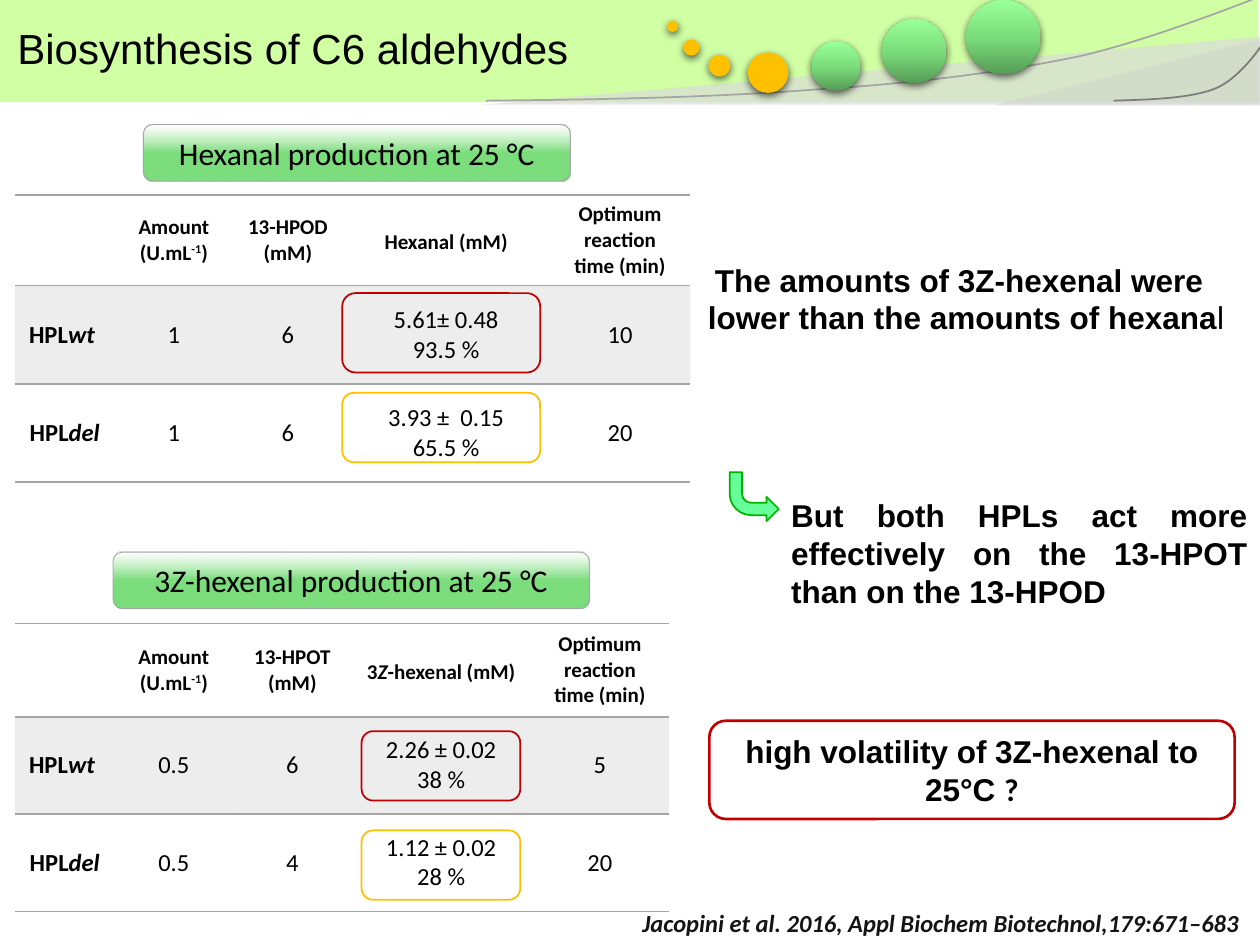
import collections

import lxml.etree
import pptx
import pptx.dml.color
import pptx.enum.shapes
import pptx.enum.text
import pptx.oxml.ns
import pptx.util

Box = collections.namedtuple("Box", "left top width height")
SHAPE = pptx.enum.shapes.MSO_SHAPE
ALIGN = pptx.enum.text.PP_ALIGN
MIDDLE = pptx.enum.text.MSO_ANCHOR.MIDDLE
TOP = pptx.enum.text.MSO_ANCHOR.TOP
GREY, RED, AMBER = "A5A5A5", "C00000", "FFC000"
SPHERE = [(0, "569C56", 100), (50, "7BDD7B", 100), (100, "99FF99", 100)]
GLOSS = [(50, "7BDD7B", 100), (98, "FFFFFF", 73), (100, "99FF99", 100)]
NO_STYLE = "{2D5ABB26-0587-4C30-8999-92F81FD0307C}"


def rgb(code):
    """Turn a hex string into a colour."""
    return pptx.dml.color.RGBColor.from_string(code)


def node(parent, tag, **attributes):
    """Append a DrawingML element to its parent."""
    values = {key: str(value) for key, value in attributes.items()}
    return lxml.etree.SubElement(parent, pptx.oxml.ns.qn(tag), values)


def emu(box):
    """Convert a box in centimetres to lengths."""
    return [pptx.util.Cm(length) for length in box]


def within(box, left, top, width, height):
    """Place a box relative to the corner of another."""
    return Box(box.left + left, box.top + top, width, height)


def color_node(parent, code, alpha=100):
    """Append a colour with its opacity in percent."""
    color = node(parent, "a:srgbClr", val=code)
    if alpha < 100:
        node(color, "a:alpha", val=alpha * 1000)


def paint(fill, code, alpha=100):
    """Fill with a solid colour of the given opacity."""
    fill.solid()
    fill.fore_color.rgb = rgb(code)
    if alpha < 100:
        solid = fill._xPr.find(pptx.oxml.ns.qn("a:solidFill"))
        node(solid[0], "a:alpha", val=alpha * 1000)


def paint_gradient(shape, stops):
    """Fill a shape with a gradient that runs upwards."""
    paint(shape.fill, stops[0][1])
    properties = shape._element.spPr
    gradient = node(properties, "a:gradFill", rotWithShape=1)
    listing = node(gradient, "a:gsLst")
    for position, code, alpha in stops:
        color_node(node(listing, "a:gs", pos=position * 1000), code, alpha)
    node(gradient, "a:lin", ang=16200000, scaled=0)
    properties.replace(properties.find(pptx.oxml.ns.qn("a:solidFill")), gradient)


def outline(shape, code=None, weight=1):
    """Draw the line of a shape, or remove it."""
    if code:
        shape.line.color.rgb = rgb(code)
        shape.line.width = pptx.util.Pt(weight)
    else:
        shape.line.fill.background()


def draw(slide, kind, box, fill=None, alpha=100, line=None, weight=1, flip=None):
    """Add a preset shape without shadow."""
    shape = slide.shapes.add_shape(kind, *emu(box))
    shape.shadow.inherit = False
    if isinstance(fill, list):
        paint_gradient(shape, fill)
    elif fill:
        paint(shape.fill, fill, alpha)
    else:
        shape.fill.background()
    outline(shape, line, weight)
    if flip:
        shape._element.spPr.xfrm.set(flip, "1")
    return shape


def write(frame, paragraphs, size=18, font="Arial", color="000000", bold=False,
          italic=False, align=ALIGN.CENTER, anchor=MIDDLE, spacing=None):
    """Write paragraphs of runs, each a string or a pair of string and changes."""
    frame.word_wrap = True
    frame.vertical_anchor = anchor
    for index, runs in enumerate(paragraphs):
        paragraph = frame.add_paragraph() if index else frame.paragraphs[0]
        paragraph.alignment = align
        paragraph.line_spacing = spacing
        for piece in [runs] if isinstance(runs, str) else runs:
            text, changes = (piece, {}) if isinstance(piece, str) else piece
            run = paragraph.add_run()
            run.text = text
            run.font.size = pptx.util.Pt(size)
            run.font.name = changes.get("font", font)
            run.font.bold = changes.get("bold", bold)
            run.font.italic = changes.get("italic", italic)
            run.font.color.rgb = rgb(color)
            if "baseline" in changes:
                run._r.get_or_add_rPr().set("baseline", str(changes["baseline"]))


def write_box(slide, box, paragraphs, **style):
    """Add a text box anchored at its top."""
    write(slide.shapes.add_textbox(*emu(box)).text_frame, paragraphs, anchor=TOP, **style)


def swoosh(slide, box, points, color):
    """Draw a smooth line through chained cubic curves."""
    traced = []
    for first in range(0, len(points) - 1, 3):
        controls = points[first:first + 4]
        for step in range(1, 17):
            t = step / 16
            weights = ((1 - t) ** 3, 3 * t * (1 - t) ** 2, 3 * t * t * (1 - t), t ** 3)
            traced.append([sum(w * p[axis] for w, p in zip(weights, controls)) for axis in (0, 1)])
    start, *rest = [(pptx.util.Cm(box.left + x), pptx.util.Cm(box.top + y))
                    for x, y in [points[0]] + traced]
    builder = slide.shapes.build_freeform(*start)
    builder.add_line_segments(rest, close=False)
    curve = builder.convert_to_shape()
    curve.shadow.inherit = False
    curve.fill.background()
    outline(curve, color)


def ball(slide, box, fill, line=None):
    """Draw a circle with a soft shadow below."""
    circle = draw(slide, SHAPE.OVAL, box, fill, line=line, weight=0.75)
    effects = circle._element.spPr.find(pptx.oxml.ns.qn("a:effectLst"))
    shadow = node(effects, "a:outerShdw", blurRad=57150, dist=19050, dir=5400000,
                  algn="ctr", rotWithShape=0)
    color_node(shadow, "000000", 63)


def banner(slide, box, heading):
    """Draw the header band with its title and chain of balls."""
    draw(slide, SHAPE.RECTANGLE, box, "CCFF99", 89)
    draw(slide, SHAPE.RIGHT_TRIANGLE, within(box, 9.73, 0.74, 15.67, 1.37), "DBDBDB", 68, flip="flipH")
    draw(slide, SHAPE.RIGHT_TRIANGLE, within(box, 20.02, 0.76, 5.51, 1.37), "C9C9C9", 33, flip="flipH")
    swoosh(slide, box, [(9.8, 2.03), (12.17, 2.01), (14.53, 1.96), (16.51, 1.8), (18.49, 1.68),
                        (20.24, 1.45), (21.74, 1.14), (23.22, 0.81), (25.48, -0.1), (25.48, -0.1)], GREY)
    swoosh(slide, box, [(22.45, 2.03), (23.22, 2.01), (23.98, 1.98), (24.46, 1.8),
                        (24.97, 1.63), (25.45, 0.89), (25.45, 0.89)], "7C7C7C")
    for left, top, size in [(19.48, 0, 1.5), (16.36, 0.84, 0.99), (17.78, 0.38, 1.3)]:
        ball(slide, within(box, left, top, size, size), SPHERE)
    for left, top, size in [(15.09, 1.07, 0.79), (14.3, 1.12, 0.41), (13.79, 0.81, 0.3), (13.46, 0.43, 0.2)]:
        ball(slide, within(box, left, top, size, size), AMBER, AMBER)
    title = slide.shapes.title
    title.left, title.top, title.width, title.height = emu(within(box, -0.89, 0.33, 13.59, 1.27))
    write(title.text_frame, [heading], size=24)
    slide.shapes._spTree.append(title._element)


def rule(cell, *sides):
    """Draw grey borders on the named sides of a cell."""
    properties = cell._tc.get_or_add_tcPr()
    for index, side in enumerate(sides):
        border = node(properties, "a:" + side, w=12700)
        color_node(node(border, "a:solidFill"), GREY)
        properties.insert(index, border)


def production(slide, box, heading, pill, columns, heights, headers, rows, marks):
    """Draw one heading, its table and the frames round the yields."""
    pill_left, pill_width = pill
    label = draw(slide, SHAPE.FLOWCHART_ALTERNATE_PROCESS,
                 within(box, pill_left, 0, pill_width, 1.14), GLOSS, line=GREY, weight=0.5)
    write(label.text_frame, [heading], font="Calibri")
    table_height = sum(heights)
    table = slide.shapes.add_table(3, 5, *emu(within(
        box, 0, box.height - table_height, box.width, table_height))).table
    table._tbl.tblPr.find(pptx.oxml.ns.qn("a:tableStyleId")).text = NO_STYLE
    table.first_row = table.horz_banding = False
    for column, width in zip(table.columns, columns):
        column.width = pptx.util.Cm(width)
    for row, height in zip(table.rows, heights):
        row.height = pptx.util.Cm(height)
    for r, contents in enumerate([headers] + rows):
        for c, paragraphs in enumerate(contents):
            cell = table.cell(r, c)
            write(cell.text_frame, paragraphs, size=14 if r else 12, font="Calibri",
                  bold=r == 0 or c == 0, spacing=1.15 if (r, c) == (0, 3) else None)
            cell.vertical_anchor = MIDDLE
            if r == 1:
                paint(cell.fill, GREY, 20)
            else:
                cell.fill.background()
            rule(cell, *[("lnT", "lnB"), ("lnT",), ("lnB",)][r])
    for mark, color in zip(marks, (RED, AMBER)):
        draw(slide, SHAPE.ROUNDED_RECTANGLE, within(box, *mark), line=color)


def commentary(slide, box):
    """Place the three remarks and the arrow that links them."""
    write_box(slide, within(box, 0, 0, 11.4, 1.8), [[
        (" ", {"font": "Calibri"}),
        "The amounts of 3Z-hexenal were lower than the amounts of hexana",
        ("l", {"bold": False})]], bold=True, align=ALIGN.LEFT)
    draw(slide, SHAPE.BENT_ARROW, within(box, 0.69, 4.39, 0.99, 0.99), "66FF99", line="00B400", flip="flipV")
    write_box(slide, within(box, 1.68, 4.75, 9.7, 2.56),
              ["But both HPLs act more effectively on the 13-HPOT than on the 13-HPOD"],
              bold=True, align=ALIGN.JUSTIFY)
    question = draw(slide, SHAPE.ROUNDED_RECTANGLE, within(box, 0.28, 9.4, 10.59, 1.98), line=RED, weight=1.5)
    write(question.text_frame, [["high volatility of 3Z-hexenal to 25°C ", ("?", {"font": "Calibri"})]], bold=True)


def main():
    """Build the slide and save it."""
    deck = pptx.Presentation()
    deck.slide_width, deck.slide_height = pptx.util.Cm(25.4), pptx.util.Cm(19.05)
    slide = deck.slides.add_slide(deck.slide_layouts[5])
    zed, minus_one = ("Z", {"italic": True}), ("-1", {"baseline": 30000})
    wild, deleted = [["HPL", ("wt ", {"italic": True})]], [["HPL", ("del", {"italic": True})]]
    time = ["Optimum reaction time (min)"]
    banner(slide, Box(0, 0, 25.37, 2.06), "Biosynthesis of C6 aldehydes")
    production(slide, Box(0.3, 2.51, 13.62, 7.21), "Hexanal production at 25 °C", (2.59, 8.61),
               [2.01, 2.39, 2.21, 4.17, 2.84], [1.83, 1.98, 1.98],
               [[], [["Amount (U.mL", minus_one, ")"]], ["13-HPOD", "(mM)"], ["Hexanal (mM)"], time],
               [[wild, ["1"], ["6"], ["5.61± 0.48", "93.5 %"], ["10"]],
                [deleted, ["1"], ["6"], ["3.93 ±  0.15", "65.5 %"], ["20"]]],
               [(6.6, 3.4, 3.99, 1.6), (6.6, 5.41, 3.99, 1.4)])
    production(slide, Box(0.3, 11.13, 13.19, 7.24), ["3", zed, "-hexenal production at 25 °C"], (1.98, 9.6),
               [2.01, 2.39, 2.39, 3.61, 2.79], [1.88, 1.96, 1.96],
               [[], ["Amount", ["(U.mL", minus_one, ")"]], ["13-HPOT", "(mM)"],
                [["3", zed, "-hexenal (mM)"]], time],
               [[wild, ["0.5"], ["6"], ["2.26 ± 0.02", "38 %"], ["5"]],
                [deleted, ["0.5"], ["4"], ["1.12 ± 0.02", "28 %"], ["20"]]],
               [(6.99, 3.61, 3.2, 1.4), (6.99, 5.61, 3.2, 1.4)])
    commentary(slide, Box(14.02, 5.13, 11.4, 11.38))
    write_box(slide, Box(12.7, 18.19, 12.7, 0.86),
              ["Jacopini et al. 2016, Appl Biochem Biotechnol,179:671–683"],
              size=14, font="Calibri", color="131413", bold=True, italic=True, align=ALIGN.LEFT)
    deck.save("out.pptx")


if __name__ == "__main__":
    main()
